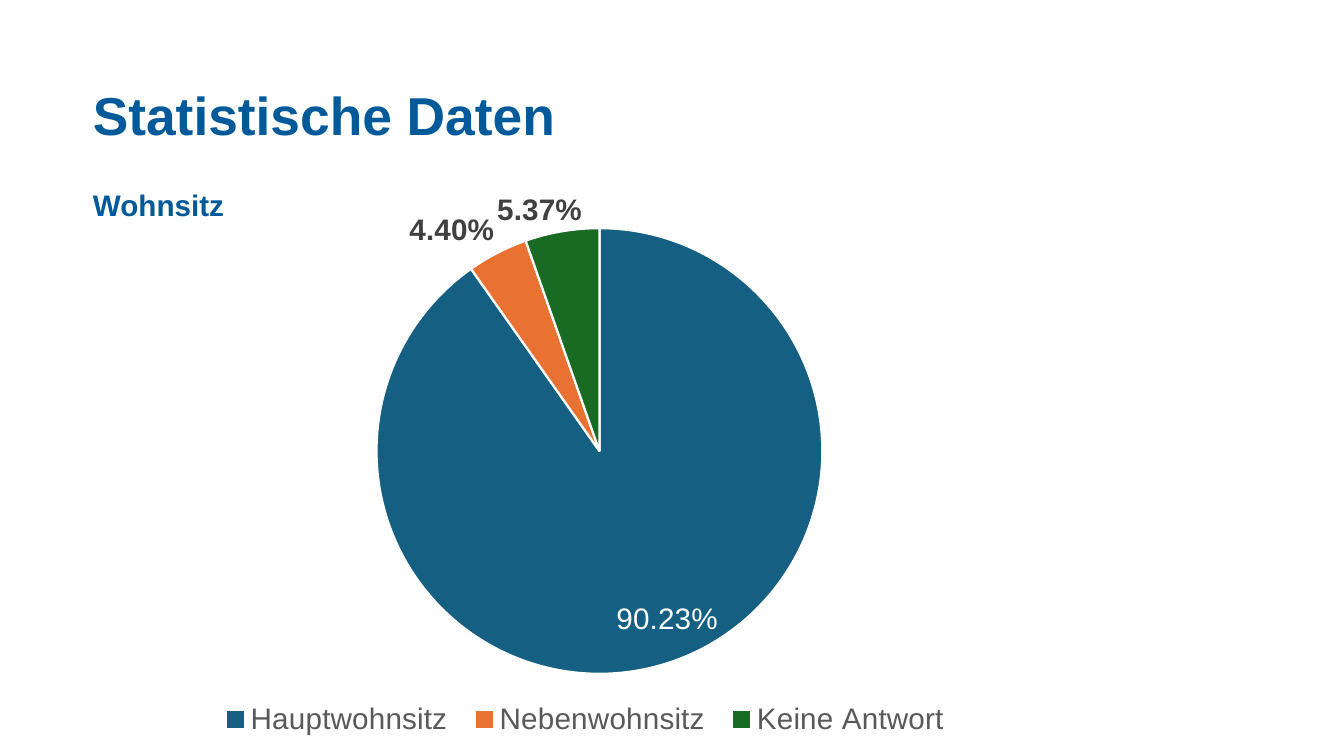
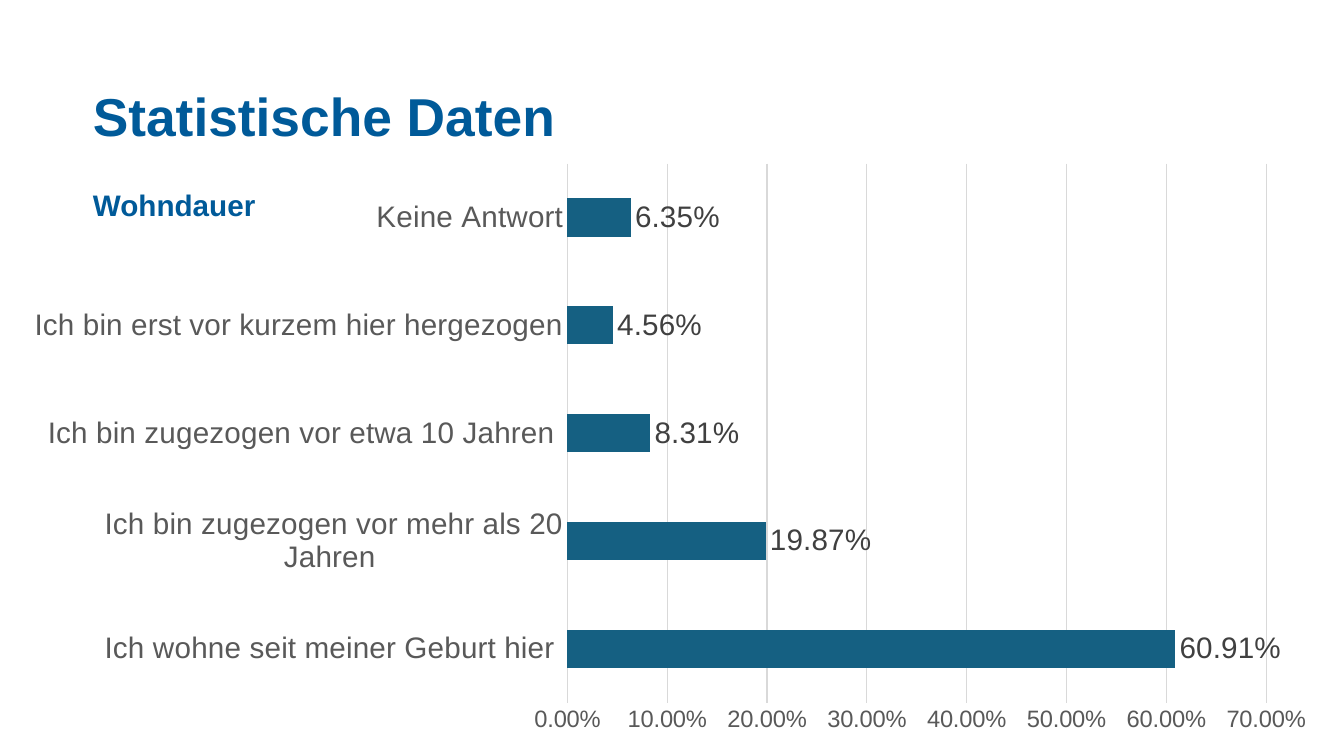
from lxml import etree
from pptx import Presentation
from pptx import util as u
from pptx.chart.data import CategoryChartData
from pptx.dml.color import RGBColor
from pptx.enum import chart as ch, text
from pptx.oxml.ns import qn

PX = 9144  # one hundredth of an inch
FONT = "Arial"
BRAND, BLUE, ORANGE, GREEN = "005A99", "156082", "E97132", "196B24"
WHITE, GRID, AXIS_TEXT, LABEL_TEXT = "FFFFFF", "D9D9D9", "595959", "404040"
PERCENT = "0.00%"
INSIDE, OUTSIDE = ch.XL_LABEL_POSITION.INSIDE_END, ch.XL_LABEL_POSITION.OUTSIDE_END

TITLE = "Statistische Daten"
RESIDENCE = [
    ("Hauptwohnsitz ", 0.9023, BLUE),
    ("Nebenwohnsitz ", 0.044, ORANGE),
    ("Keine Antwort", 0.0537, GREEN),
]
DURATION = [
    ("Ich wohne seit meiner Geburt hier ", 0.6091),
    ("Ich bin zugezogen vor mehr als 20 Jahren ", 0.1987),
    ("Ich bin zugezogen vor etwa 10 Jahren ", 0.0831),
    ("Ich bin erst vor kurzem hier hergezogen ", 0.0456),
    ("Keine Antwort", 0.0635),
]
PIE_BOX, PIE_PLOT = (87, 164, 923, 532), (353, 214, 418, 418)
BAR_BOX, BAR_PLOT = (30, 153, 1202, 585), (532, 153, 655, 506)
# point, color, bold, position, shift right and down
MOVED_LABELS = [
    (0, WHITE, False, INSIDE, (50, -20)),
    (2, LABEL_TEXT, True, OUTSIDE, (20, 2)),
]


def rgb(value):
    return RGBColor.from_string(value)


def style_font(font, size, color, bold=False):
    font.name, font.size, font.bold = FONT, u.Pt(size), bold
    font.color.rgb = rgb(color)


def style_line(line, color, width):
    line.color.rgb = rgb(color)
    line.width = u.Pt(width)


def put_text(sp, content, box, size, color, spacing, bold=True):
    sp.left, sp.top, sp.width, sp.height = (v * PX for v in box)
    tf = sp.text_frame
    tf.margin_left = tf.margin_top = tf.margin_right = tf.margin_bottom = 0
    tf.word_wrap = True
    tf.auto_size = text.MSO_AUTO_SIZE.NONE
    tf.vertical_anchor = text.MSO_ANCHOR.TOP
    p = tf.paragraphs[0]
    p.alignment = text.PP_ALIGN.LEFT
    p.line_spacing = u.Pt(spacing)
    p.space_before = u.Pt(0)
    r = p.add_run()
    r.text = content
    style_font(r.font, size, color, bold)


def add_slide(prs, subtitle, title_top):
    s = prs.slides.add_slide(prs.slide_layouts[0])
    put_text(s.shapes.title, TITLE, (87, title_top, 770, 53), 36, BRAND, 38)
    put_text(s.placeholders[1], subtitle, (87, 174, 1084, 33), 20, BRAND, 25)
    return s


def set_layout(parent, index, settings):
    """Give a chart part a manual layout, as its child at the index."""
    for old in parent.findall(qn("c:layout")):
        parent.remove(old)
    layout = etree.Element(qn("c:layout"))
    manual = etree.SubElement(layout, qn("c:manualLayout"))
    for tag, value in settings:
        etree.SubElement(manual, qn("c:" + tag)).set("val", str(value))
    parent.insert(index, layout)


def set_plot_area(chart, box, plot):
    left, top, width, height = box
    x, y, w, h = plot
    fractions = ((x - left) / width, (y - top) / height, w / width, h / height)
    settings = [("layoutTarget", "inner"), ("xMode", "edge"), ("yMode", "edge")]
    area = chart._chartSpace.find(".//" + qn("c:plotArea"))
    set_layout(area, 0, settings + list(zip("xywh", fractions)))


def add_chart(s, kind, rows, box, plot, bold):
    data = CategoryChartData(number_format=PERCENT)
    data.categories = [row[0] for row in rows]
    data.add_series("Series 1", [row[1] for row in rows])
    chart = s.shapes.add_chart(kind, *(v * PX for v in box), data).chart
    chart.has_title = chart.has_legend = False
    style_font(chart.font, 14, "000000")
    set_plot_area(chart, box, plot)
    series = chart.plots[0].series[0]
    labels = series.data_labels
    labels.show_value = True
    labels.number_format, labels.number_format_is_linked = PERCENT, False
    labels.position = OUTSIDE
    style_font(labels.font, 20, LABEL_TEXT, bold)
    return chart, series


def move_labels(series):
    for point, color, bold, position, (right, down) in MOVED_LABELS:
        label = series.points[point].data_label
        style_font(label.font, 20, color, bold)
        label.position = position
        element = next(d for d in series._element.iter(qn("c:dLbl"))
                       if d.find(qn("c:idx")).get("val") == str(point))
        set_layout(element, 1, [("x", right / PIE_BOX[2]), ("y", down / PIE_BOX[3])])
    for leader in series._element.iter(qn("c:showLeaderLines")):
        leader.set("val", "0")


def add_residence_pie(s):
    chart, series = add_chart(s, ch.XL_CHART_TYPE.PIE, RESIDENCE, PIE_BOX, PIE_PLOT, True)
    chart.plots[0].vary_by_categories = True
    for i, (_, _, color) in enumerate(RESIDENCE):
        fmt = series.points[i].format
        fmt.fill.solid()
        fmt.fill.fore_color.rgb = rgb(color)
        style_line(fmt.line, WHITE, 1.5)
    move_labels(series)
    chart.has_legend = True
    chart.legend.position = ch.XL_LEGEND_POSITION.BOTTOM
    chart.legend.include_in_layout = False
    style_font(chart.legend.font, 20, AXIS_TEXT)


def add_duration_bars(s):
    chart, series = add_chart(s, ch.XL_CHART_TYPE.BAR_CLUSTERED, DURATION, BAR_BOX, BAR_PLOT,
                              False)
    chart.plots[0].vary_by_categories = False
    chart.plots[0].gap_width = 182
    series.format.fill.solid()
    series.format.fill.fore_color.rgb = rgb(BLUE)
    categories, values = chart.category_axis, chart.value_axis
    for axis, size in ((categories, 20), (values, 16)):
        axis.major_tick_mark = axis.minor_tick_mark = ch.XL_TICK_MARK.NONE
        style_font(axis.tick_labels.font, size, AXIS_TEXT)
    style_line(categories.format.line, GRID, 0.75)
    values.format.line.fill.background()
    values.has_major_gridlines = True
    style_line(values.major_gridlines.format.line, GRID, 0.75)
    values.minimum_scale, values.maximum_scale, values.major_unit = 0, 0.7, 0.1
    values.tick_labels.number_format = PERCENT
    values.tick_labels.number_format_is_linked = False


def main():
    prs = Presentation()
    prs.slide_width, prs.slide_height = 1260 * PX, 709 * PX
    add_residence_pie(add_slide(prs, "Wohnsitz", 84))
    add_duration_bars(add_slide(prs, "Wohndauer", 85))
    prs.save("out.pptx")


if __name__ == "__main__":
    main()
